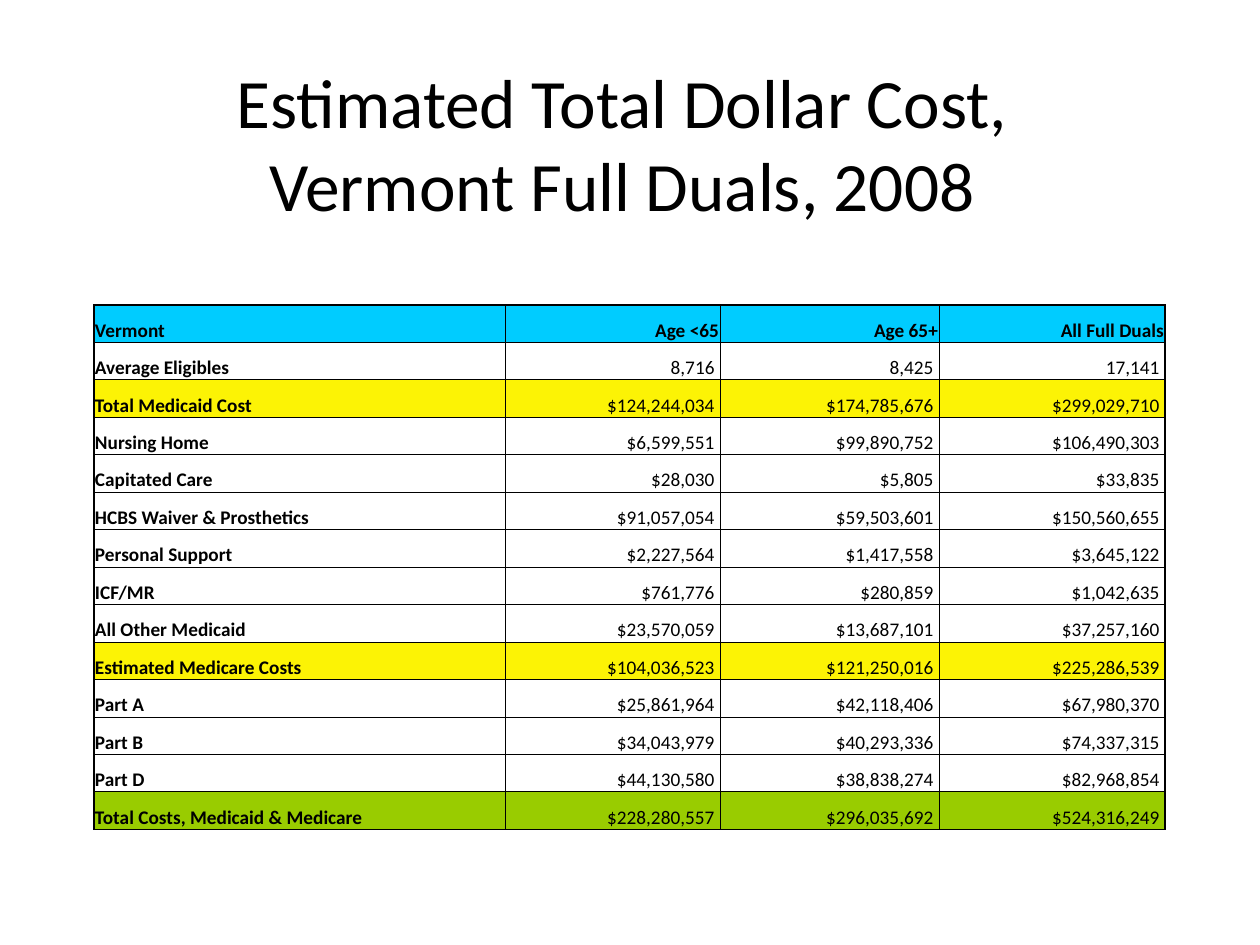
from lxml.etree import SubElement
from pptx import Presentation
from pptx.dml.color import RGBColor
from pptx.enum.text import MSO_ANCHOR, MSO_AUTO_SIZE, PP_ALIGN
from pptx.oxml.ns import qn
from pptx.util import Emu, Pt

SCALE = 914400 / 126  # EMU per px


def px(length):
    return Emu(round(length * SCALE))


def color(hex_string):
    return RGBColor.from_string(hex_string)


presentation = Presentation()
presentation.slide_width, presentation.slide_height = px(1260), px(945)
slide = presentation.slides.add_slide(presentation.slide_layouts[5])

# Title
title = slide.shapes.title
title.left, title.top, title.width, title.height = px(63), px(63), px(1134), px(158)
title.text_frame.text = "Estimated Total Dollar Cost, \vVermont Full Duals, 2008 "
title.text_frame.auto_size = MSO_AUTO_SIZE.NONE
title.text_frame.vertical_anchor = MSO_ANCHOR.MIDDLE
paragraph = title.text_frame.paragraphs[0]
paragraph.alignment = PP_ALIGN.CENTER
paragraph.font.name = "Calibri"
paragraph.font.size = Pt(39.6)
paragraph.font.color.rgb = color("000000")

# Cost table: label, three values
rows = [
    ("Vermont", "Age <65", "Age 65+", "All Full Duals"),
    ("Average Eligibles", "8,716", "8,425", "17,141"),
    ("Total Medicaid Cost", "$124,244,034", "$174,785,676", "$299,029,710"),
    ("Nursing Home", "$6,599,551", "$99,890,752", "$106,490,303"),
    ("Capitated Care", "$28,030", "$5,805", "$33,835"),
    ("HCBS Waiver & Prosthetics", "$91,057,054", "$59,503,601", "$150,560,655"),
    ("Personal Support", "$2,227,564", "$1,417,558", "$3,645,122"),
    ("ICF/MR", "$761,776", "$280,859", "$1,042,635"),
    ("All Other Medicaid", "$23,570,059", "$13,687,101", "$37,257,160"),
    ("Estimated Medicare Costs", "$104,036,523", "$121,250,016", "$225,286,539"),
    ("Part A", "$25,861,964", "$42,118,406", "$67,980,370"),
    ("Part B", "$34,043,979", "$40,293,336", "$74,337,315"),
    ("Part D", "$44,130,580", "$38,838,274", "$82,968,854"),
    ("Total Costs, Medicaid & Medicare", "$228,280,557", "$296,035,692", "$524,316,249"),
]
row_fills = {0: "00CCFF", 2: "FCF305", 9: "FCF305", 13: "99CC00"}
column_widths = [411, 215, 219, 226]
last_row, last_column = len(rows) - 1, len(column_widths) - 1

table = slide.shapes.add_table(
    len(rows), len(column_widths), px(94), px(305), px(sum(column_widths)), px(525)
).table
table.first_row = table.horz_banding = False
for column, width in zip(table.columns, column_widths):
    column.width = px(width)

for row_index, row in enumerate(rows):
    for column_index, text in enumerate(row):
        cell = table.cell(row_index, column_index)
        is_header, is_label = row_index == 0, column_index == 0

        # Text
        cell.text = text if is_header or is_label else f" {text} "
        cell.vertical_anchor = MSO_ANCHOR.BOTTOM
        cell.margin_left = cell.margin_right = cell.margin_top = px(1)
        cell.margin_bottom = 0
        paragraph = cell.text_frame.paragraphs[0]
        paragraph.alignment = PP_ALIGN.LEFT if is_label else PP_ALIGN.RIGHT
        paragraph.font.name = "Calibri"
        paragraph.font.size = Pt(11)
        paragraph.font.bold = is_header or is_label
        paragraph.font.color.rgb = color("000000")

        # Borders: thin inside, thicker around the table
        outer_edges = {
            "a:lnL": is_label,
            "a:lnR": column_index == last_column,
            "a:lnT": is_header,
            "a:lnB": row_index == last_row,
        }
        properties = cell._tc.get_or_add_tcPr()
        for tag, is_outer in outer_edges.items():
            line = SubElement(properties, qn(tag), w=str(Pt(1 if is_outer else 0.5)))
            solid_fill = SubElement(line, qn("a:solidFill"))
            SubElement(solid_fill, qn("a:srgbClr"), val="000000")

        # Fill
        if row_index in row_fills:
            cell.fill.solid()
            cell.fill.fore_color.rgb = color(row_fills[row_index])
        else:
            cell.fill.background()

presentation.save("out.pptx")
